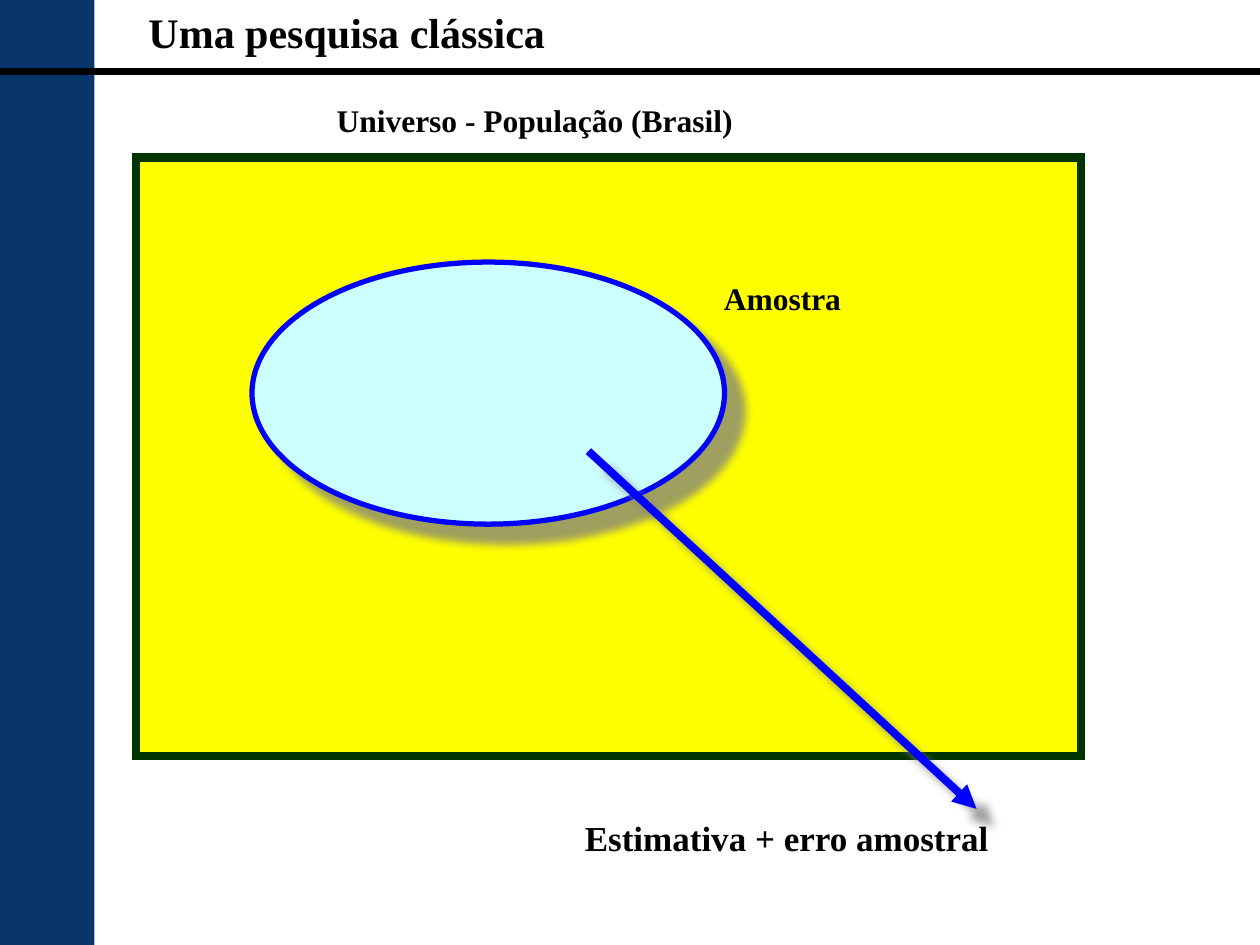
"""Build a slide on a classic survey: universe, sample and estimate."""
from lxml.etree import SubElement as Sub
from pptx import Presentation
from pptx.dml.color import RGBColor as RGB
from pptx.enum.shapes import MSO_CONNECTOR as Conn, MSO_SHAPE as Kind
from pptx.enum.text import MSO_ANCHOR as Anchor, PP_ALIGN as Align
from pptx.oxml.ns import qn
from pptx.util import Inches, Pt

HUES = {"navy": "09356D", "black": "000000", "yellow": "FFFF00", "green": "003300",
        "pale": "CCFFFF", "blue": "0000FF", "gray": "808080"}
FONT = "Times New Roman"

SHAPES = [
    (Kind.RECTANGLE, (0, 0, 0.75, 7.5), "navy", None, 0, False),
    (Kind.RECTANGLE, (0, 0.54, 10, 0.05), "black", "black", 0.5, False),
    (Kind.RECTANGLE, (1.08, 1.25, 7.5, 4.75), "yellow", "green", 5, False),
    (Kind.OVAL, (2, 2.08, 3.75, 2.08), "pale", "blue", 3, True),
]
ARROW = (4.67, 3.58, 7.75, 6.42)
TEXTS = [
    ("Universo - População (Brasil)", (1.08, 0.67, 6.33, 0.57), 18, Align.CENTER),
    ("Amostra", (4.75, 2.08, 2.92, 0.57), 18, Align.CENTER),
    ("Estimativa + erro amostral", (2.83, 6.43, 6.83, 0.43), 20, Align.CENTER),
    ("Uma pesquisa clássica", (1.08, 0, 6.5, 0.5), 24, Align.LEFT),
]


def hue(name):
    return RGB.from_string(HUES[name])


def inch(box):
    return [Inches(n) for n in box]


def shade(item):
    """Add a soft gray shadow to the lower right."""
    fx = Sub(item._element.spPr, qn("a:effectLst"))
    cast = Sub(fx, qn("a:outerShdw"), blurRad=str(Pt(5)), dist=str(Pt(14.1)),
               dir=str(45 * 60000), algn="ctr", rotWithShape="0")
    tint = Sub(cast, qn("a:srgbClr"), val=HUES["gray"])
    Sub(tint, qn("a:alpha"), val="75000")


def add_form(slide, kind, box, fill, edge, width, cast):
    form = slide.shapes.add_shape(kind, *inch(box))
    form.fill.solid()
    form.fill.fore_color.rgb = hue(fill)
    if edge:
        form.line.color.rgb = hue(edge)
        form.line.width = Pt(width)
        Sub(form._element.spPr.get_or_add_ln(), qn("a:miter"), lim="800000")
    else:
        form.line.fill.background()
    if cast:
        shade(form)
    else:
        form.shadow.inherit = False


def add_arrow(slide, ends):
    arrow = slide.shapes.add_connector(Conn.STRAIGHT, *inch(ends))
    arrow.line.color.rgb = hue("blue")
    arrow.line.width = Pt(4.5)
    Sub(arrow._element.spPr.get_or_add_ln(), qn("a:tailEnd"), type="triangle")
    shade(arrow)


def add_text(slide, text, box, size, align):
    frame = slide.shapes.add_textbox(*inch(box)).text_frame
    frame.word_wrap = True
    frame.vertical_anchor = Anchor.MIDDLE
    frame.text = text
    para = frame.paragraphs[0]
    para.alignment = align
    font = para.runs[0].font
    font.name, font.size, font.bold = FONT, Pt(size), True
    font.color.rgb = hue("black")


def main():
    deck = Presentation()
    deck.slide_width, deck.slide_height = Inches(10), Inches(7.5)
    slide = deck.slides.add_slide(deck.slide_layouts[6])
    for row in SHAPES:
        add_form(slide, *row)
    add_arrow(slide, ARROW)
    for row in TEXTS:
        add_text(slide, *row)
    deck.save("out.pptx")


if __name__ == "__main__":
    main()
